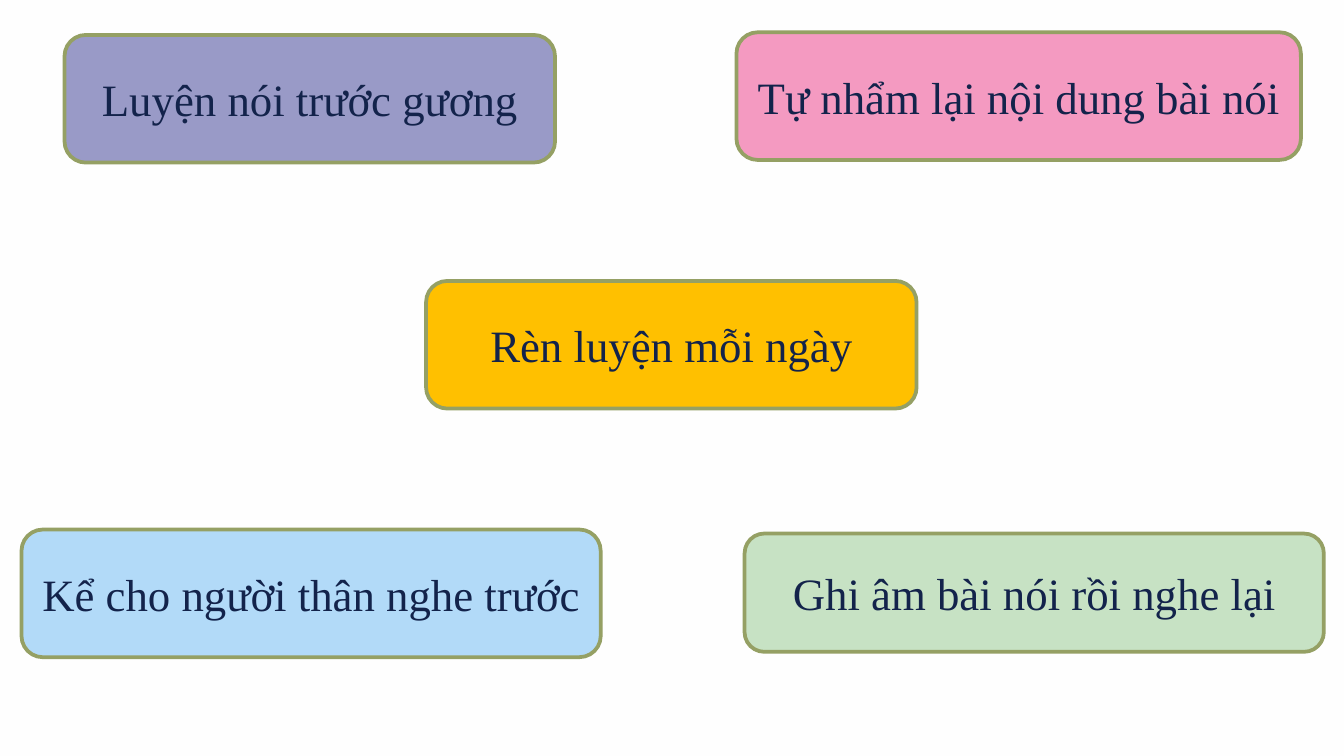
from pptx import Presentation
from pptx import util as u
from pptx.dml.color import RGBColor
from pptx.enum import shapes, text

COLORS = {
    "background": "FEFEFE",
    "outline": "95A064",
    "ink": "13234B",
    "purple": "999AC7",
    "blue": "B2DAF8",
    "pink": "F49AC1",
    "green": "C7E2C4",
    "amber": "FFC000",
}
FONT = {"name": "Times New Roman", "size": u.Pt(24)}
FRAME = {"word_wrap": True, "vertical_anchor": text.MSO_ANCHOR.MIDDLE}

CARDS = [
    ("Luyện nói trước gương", "purple", (0.48, 0.26, 3.65, 0.95)),
    ("Kể cho người thân nghe trước", "blue", (0.16, 3.94, 4.31, 0.95)),
    ("Tự nhẩm lại nội dung bài nói", "pink", (5.48, 0.24, 4.2, 0.95)),
    ("Ghi âm bài nói rồi nghe lại", "green", (5.54, 3.97, 4.31, 0.88)),
    ("Rèn luyện mỗi ngày", "amber", (3.17, 2.09, 3.65, 0.95)),
]


def apply(target, values):
    for name, value in values.items():
        setattr(target, name, value)


class SlideBuilder:
    def __init__(self, slide, colors, font):
        self.slide = slide
        self.colors = colors
        self.font = font

    def paint(self, fill, color):
        fill.solid()
        fill.fore_color.rgb = RGBColor.from_string(self.colors[color])

    def background(self, color):
        self.paint(self.slide.background.fill, color)

    def card(self, label, color, box):
        sp = self.slide.shapes.add_shape(
            shapes.MSO_SHAPE.ROUNDED_RECTANGLE, *map(u.Inches, box)
        )
        sp.shadow.inherit = False
        self.paint(sp.fill, color)
        self.paint(sp.line.fill, "outline")
        sp.line.width = u.Pt(2)
        tf = sp.text_frame
        apply(tf, FRAME)
        p = tf.paragraphs[0]
        p.alignment = text.PP_ALIGN.CENTER
        r = p.add_run()
        r.text = label
        apply(r.font, self.font)
        self.paint(r.font.fill, "ink")


def main():
    prs = Presentation()
    prs.slide_width = u.Inches(10)
    prs.slide_height = prs.slide_width * 9 // 16
    s = SlideBuilder(prs.slides.add_slide(prs.slide_layouts[6]), COLORS, FONT)
    s.background("background")
    for card in CARDS:
        s.card(*card)
    prs.save("out.pptx")


if __name__ == "__main__":
    main()
